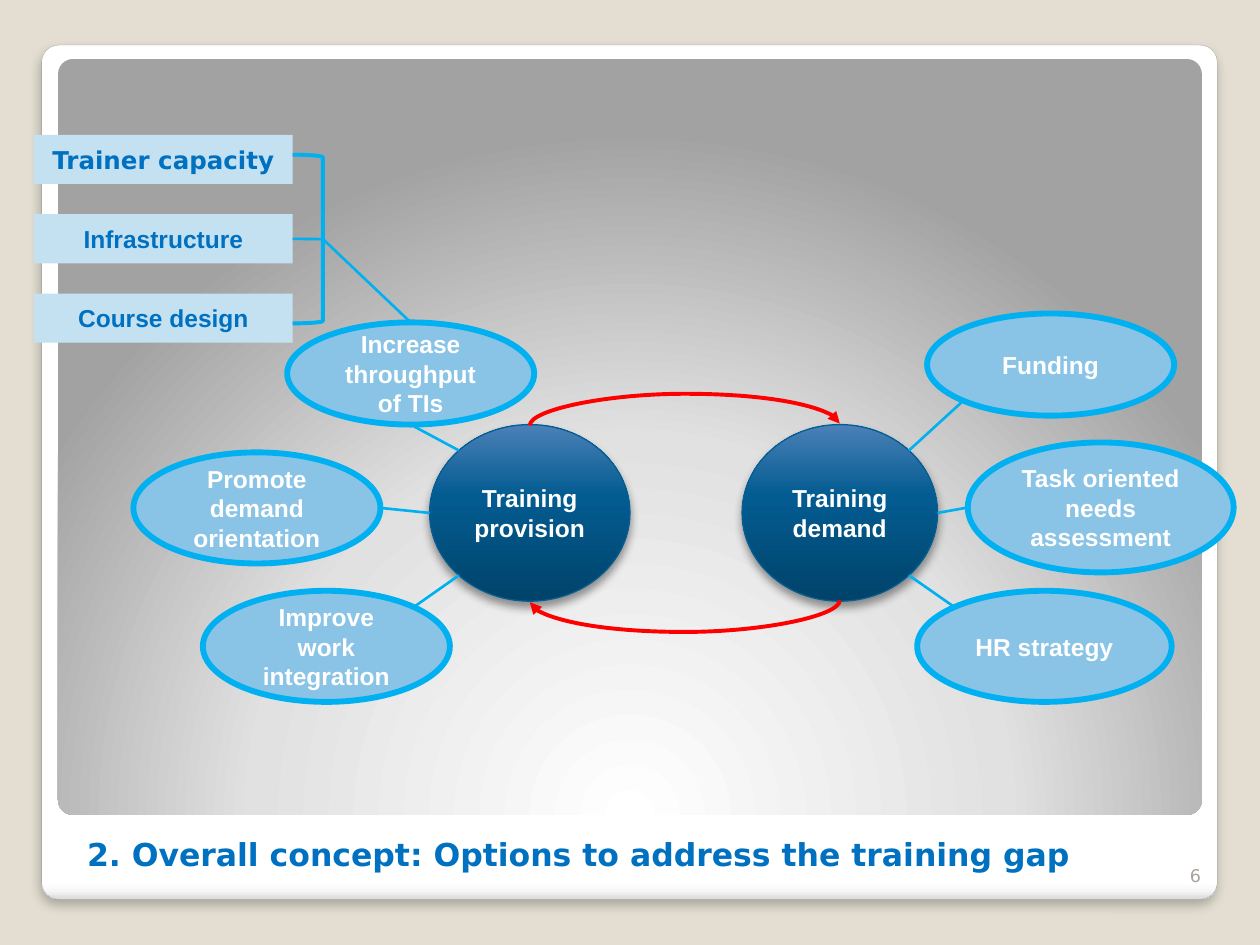
from dataclasses import dataclass
from math import cos, radians, sin

from pptx import Presentation
from pptx import util as u
from pptx.dml.color import RGBColor
from pptx.enum import shapes as sh
from pptx.enum import text as tx
from pptx.oxml import parse_xml
from pptx.oxml.ns import nsdecls, qn

BLUE, SKY, PALE, RED = "0070C0", "00B0F0", "C4E1F2", "FF0000"
KIND = sh.MSO_SHAPE
RING = {"fill": "89C3E5", "line": SKY, "wide": 3.35}


@dataclass(frozen=True)
class Box:
    x: float
    y: float
    w: float
    h: float
    words: str = ""

    def rim(self, angle: float) -> tuple[float, float]:
        turn = radians(angle)
        return (self.x + self.w / 2 * (1 + cos(turn)),
                self.y + self.h / 2 * (1 + sin(turn)))

    def place(self) -> list:
        return [u.Cm(v) for v in (self.x, self.y, self.w, self.h)]


@dataclass(frozen=True)
class Link:
    start: Box
    out: float
    end: Box
    into: float


def tint(part, code: str) -> None:
    part.rgb = RGBColor.from_string(code)


def xml(body: str, tag: str):
    return parse_xml(body.replace(f"<a:{tag}", f"<a:{tag} {nsdecls('a')}", 1))


def write(frame, words: str, color: str, align, **extra) -> None:
    form = {"name": "Arial", "size": u.Pt(14), "bold": True} | extra
    frame.word_wrap = True
    para = frame.paragraphs[0]
    para.alignment = align
    run = para.add_run()
    run.text = words
    for key, value in form.items():
        setattr(run.font, key, value)
    tint(run.font.color, color)


def blend(shape, stops: list, aim: str) -> None:
    shape.fill.solid()
    marks = "".join(f'<a:gs pos="{pos * 1000}"><a:srgbClr val="{code}"/></a:gs>'
                    for pos, code in stops)
    node = xml(f'<a:gradFill rotWithShape="1"><a:gsLst>{marks}</a:gsLst>{aim}'
               '</a:gradFill>', "gradFill")
    props = shape._element.spPr
    props.replace(props.find(qn("a:solidFill")), node)


def shade(shape, alpha: int, blur: float, dist: float) -> None:
    node = xml(f'<a:outerShdw blurRad="{u.Pt(blur)}" dist="{u.Pt(dist)}" '
               'dir="5400000" algn="t" rotWithShape="0"><a:srgbClr val="000000">'
               f'<a:alpha val="{alpha * 1000}"/></a:srgbClr></a:outerShdw>',
               "outerShdw")
    shape._element.spPr.find(qn("a:effectLst")).append(node)


def draw(slide, kind, box: Box, fill: str = "", line: str = "",
         wide: float = 1, color: str = "FFFFFF", face: str = "Arial"):
    shape = slide.shapes.add_shape(kind, *box.place())
    shape.shadow.inherit = False
    if fill:
        shape.fill.solid()
        tint(shape.fill.fore_color, fill)
    else:
        shape.fill.background()
    if line:
        tint(shape.line.color, line)
        shape.line.width = u.Pt(wide)
    else:
        shape.line.fill.background()
    if box.words:
        shape.text_frame.vertical_anchor = tx.MSO_ANCHOR.MIDDLE
        write(shape.text_frame, box.words, color, tx.PP_ALIGN.CENTER, name=face)
    return shape


def join(slide, start: tuple, end: tuple, kind=sh.MSO_CONNECTOR.STRAIGHT,
         color: str = SKY, wide: float = 1.5):
    line = slide.shapes.add_connector(kind, *[u.Cm(v) for v in (*start, *end)])
    tint(line.line.color, color)
    line.line.width = u.Pt(wide)
    line._element.spPr.append(xml("<a:effectLst/>", "effectLst"))
    return line


def arc(slide, mid: float, level: float, span: float, flip: bool) -> None:
    thin = 0.04
    left, top = mid - thin / 2, level - span / 2
    ends = [(left, top), (left + thin, top + span)]
    if flip:
        ends.reverse()
    line = join(slide, *ends, sh.MSO_CONNECTOR.CURVE, RED, 2.25)
    line.rotation = 90 if hasattr(line, "rotation") else 0
    props = line._element.spPr
    props.find(qn("a:xfrm")).set("rot", "5400000")
    guides = props.find(qn("a:prstGeom")).find(qn("a:avLst"))
    guides.append(xml('<a:gd name="adj1" fmla="val 1600000"/>', "gd"))
    props.find(qn("a:ln")).append(xml('<a:tailEnd type="triangle"/>', "tailEnd"))


def frame(slide) -> None:
    card = draw(slide, KIND.ROUNDED_RECTANGLE, Box(0.84, 0.91, 23.7, 17.22),
                line="A4A4A4", wide=0.16)
    panel = draw(slide, KIND.ROUNDED_RECTANGLE, Box(1.17, 1.19, 23.06, 15.24))
    for shape in (card, panel):
        shape.adjustments[0] = 0.02
    blend(card, [(0, "FFFFFF"), (98, "FFFFFF"), (99, "F7F7F7"), (100, "DADADA")],
          '<a:lin ang="5400000" scaled="0"/>')
    shade(card, 25, 6, 4)
    blend(panel, [(0, "FFFFFF"), (55, "E1E1E1"), (100, "A2A2A2")],
          '<a:path path="circle"><a:fillToRect l="50000" t="175000" '
          'r="50000" b="-75000"/></a:path>')


def label(slide) -> None:
    title = slide.shapes.title
    slide.shapes._spTree.append(title._element)
    spot = Box(1.5, 16.61, 22.73, 1.12).place()
    for key, value in zip(("left", "top", "width", "height"), spot):
        setattr(title, key, value)
    page = slide.shapes.add_textbox(*Box(23.19, 16.97, 1.27, 1.02).place())
    for shape in (title, page):
        shape.text_frame.auto_size = tx.MSO_AUTO_SIZE.NONE
        shape.text_frame.vertical_anchor = tx.MSO_ANCHOR.BOTTOM
    write(title.text_frame,
          "2. Overall concept: Options to address the training gap", BLUE,
          tx.PP_ALIGN.LEFT, name="DejaVu Sans", size=u.Pt(18))
    write(page.text_frame, "6", "A8A49B", tx.PP_ALIGN.RIGHT,
          name="DejaVu Sans", size=u.Pt(10), bold=False)


def main() -> None:
    deck = Presentation()
    deck.slide_width, deck.slide_height = u.Cm(25.4), u.Cm(19.05)
    slide = deck.slides.add_slide(deck.slide_layouts[5])
    slide.background.fill.solid()
    tint(slide.background.fill.fore_color, "E3DED1")
    frame(slide)
    label(slide)

    supply = Box(8.66, 8.56, 4.04, 3.56, "Training provision")
    demand = Box(14.96, 8.56, 3.94, 3.56, "Training demand")
    for hub in (supply, demand):
        ball = draw(slide, KIND.OVAL, hub, line="035E94", wide=0.75)
        blend(ball, [(0, "00436A"), (60, "035C91"), (100, "4A80B7")],
              '<a:lin ang="16200000" scaled="0"/>')
        shade(ball, 40, 5.2, 3)
    left, top = supply.rim(270)
    right, low = demand.rim(90)
    for level, flip in ((top, True), (low, False)):
        arc(slide, (left + right) / 2, level, right - left, flip)

    names = ("Trainer capacity", "Infrastructure", "Course design")
    faces = ("DejaVu Sans", "Arial", "Arial")
    bars = [draw(slide, KIND.RECTANGLE, Box(0.69, 2.72 + 1.6 * i, 5.21, 0.99, name),
                 fill=PALE, color=BLUE, face=face)
            for i, (name, face) in enumerate(zip(names, faces))]
    brace = Box(5.9, 3.12, 0.61, 3.4)
    draw(slide, KIND.RIGHT_BRACKET, brace, line=SKY, wide=2.25)
    stem = join(slide, brace.rim(180), brace.rim(0))
    stem.begin_connect(bars[1], 3)

    output = Box(5.79, 6.5, 4.98, 2.06, "Increase throughput of TIs")
    focus = Box(2.69, 9.12, 4.98, 2.24, "Promote demand orientation")
    work = Box(4.09, 11.91, 4.98, 2.24, "Improve work integration")
    funds = Box(18.69, 6.32, 4.98, 2.06, "Funding")
    needs = Box(19.51, 8.92, 5.36, 2.62, "Task oriented needs assessment")
    staff = Box(18.49, 11.91, 5.13, 2.24, "HR strategy")
    for ring in (output, focus, work, funds, needs, staff):
        draw(slide, KIND.OVAL, ring, **RING)
    for link in (Link(brace, 0, output, 270), Link(output, 90, supply, 225),
                 Link(focus, 0, supply, 180), Link(work, 315, supply, 135),
                 Link(funds, 135, demand, 315), Link(demand, 0, needs, 180),
                 Link(demand, 45, staff, 225)):
        join(slide, link.start.rim(link.out), link.end.rim(link.into))
    deck.save("out.pptx")


if __name__ == "__main__":
    main()
